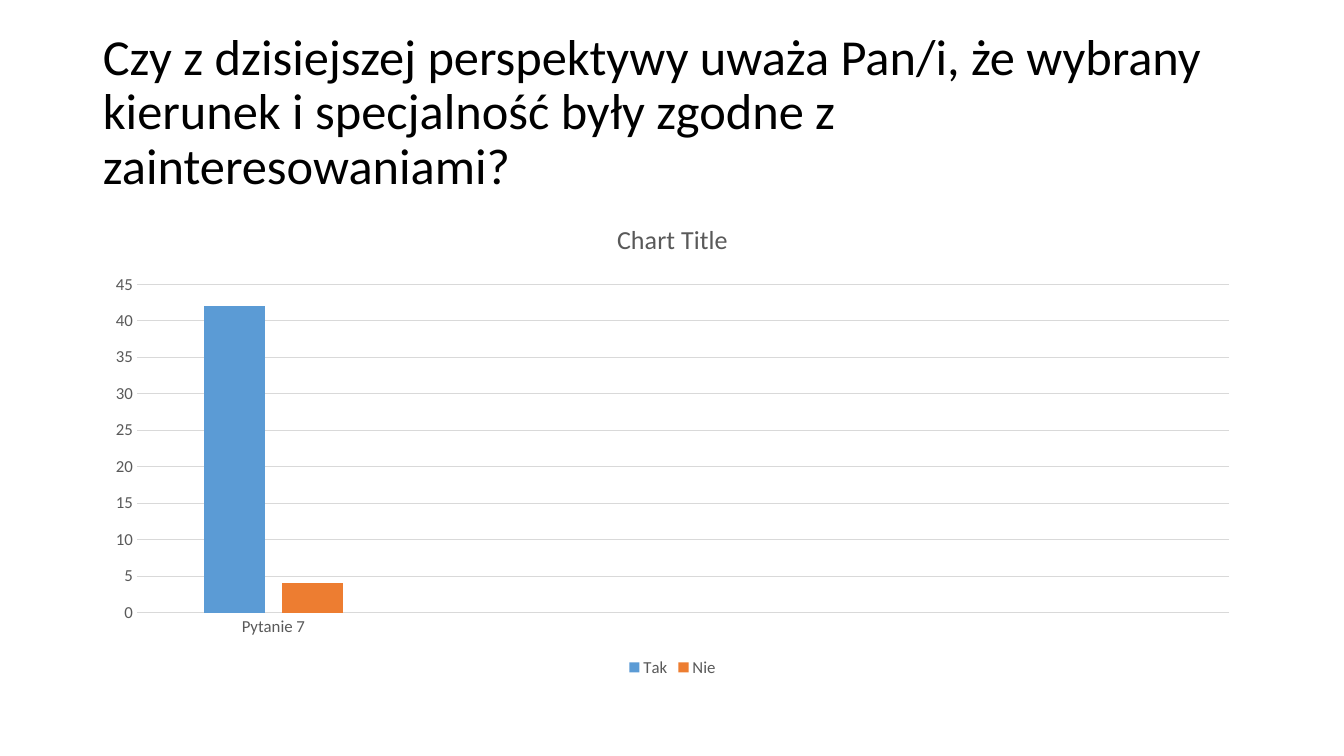
from pptx import Presentation, util as u
from pptx.chart.data import CategoryChartData
from pptx.dml.color import RGBColor
from pptx.enum import chart as ch, text as t
from lxml import etree

FONT = "Calibri"
HUES = {"ink": "000000", "label": "595959", "grid": "D9D9D9",
        "Tak": "5B9BD5", "Nie": "ED7D31"}
VOTES = {"Tak": 42, "Nie": 4}
SLOTS = ["Pytanie 7", "", "", ""]
WIDE, HIGH = 13.33, 7.5
LEFT, SPAN = 0.92, 11.5


def hue(name):
    return RGBColor.from_string(HUES[name])


def style(font, size=12, color="label"):
    font.name, font.size, font.bold = FONT, u.Pt(size), False
    font.color.rgb = hue(color)


def write(frame, words, size=12, color="label", align=None, lead=None):
    frame.text = words
    par = frame.paragraphs[0]
    par.alignment, par.line_spacing = align, lead
    style(par.runs[0].font, size, color)


def rule(line):
    line.color.rgb = hue("grid")
    line.width = u.Pt(0.75)


def head(slide, box, words):
    title = slide.shapes.title
    title.left, title.top, title.width, title.height = map(u.Inches, box)
    frame = title.text_frame
    frame.word_wrap = True
    frame.auto_size = t.MSO_AUTO_SIZE.NONE
    frame.vertical_anchor = t.MSO_ANCHOR.MIDDLE
    write(frame, words, size=36, color="ink", align=t.PP_ALIGN.LEFT, lead=0.9)


def bars(slide, box, name):
    data = CategoryChartData()
    data.categories = SLOTS
    for key, count in VOTES.items():
        data.add_series(key, [count] + [None] * (len(SLOTS) - 1))
    chart = slide.shapes.add_chart(
        ch.XL_CHART_TYPE.COLUMN_CLUSTERED, *map(u.Inches, box), data).chart
    style(chart.font, 10, "ink")
    chart.has_title = True
    write(chart.chart_title.text_frame, name, size=18.6)
    chart.chart_title.include_in_layout = False

    plot = chart.plots[0]
    plot.gap_width, plot.overlap = 219, -27
    plot.vary_by_categories = False
    for row in plot.series:
        row.format.fill.solid()
        row.format.fill.fore_color.rgb = hue(row.name)
        row.invert_if_negative = False

    for axis in (chart.category_axis, chart.value_axis):
        axis.major_tick_mark = axis.minor_tick_mark = ch.XL_TICK_MARK.NONE
        style(axis.tick_labels.font)
    rule(chart.category_axis.format.line)
    scale = chart.value_axis
    scale.minimum_scale, scale.maximum_scale, scale.major_unit = 0, 45, 5
    scale.format.line.fill.background()
    scale.has_major_gridlines = True
    rule(scale.major_gridlines.format.line)

    chart.has_legend = True
    chart.legend.position = ch.XL_LEGEND_POSITION.BOTTOM
    chart.legend.include_in_layout = False
    style(chart.legend.font)


def main():
    deck = Presentation()
    deck.slide_width, deck.slide_height = u.Inches(WIDE), u.Inches(HIGH)
    slide = deck.slides.add_slide(deck.slide_layouts[5])
    head(slide, (LEFT, 0.4, SPAN, 1.45),
         "Czy z dzisiejszej perspektywy uważa Pan/i, że wybrany kierunek "
         "i specjalność były zgodne z zainteresowaniami?")
    bars(slide, (LEFT, 2, SPAN, 4.76), "Chart Title")
    deck.save("out.pptx")


if __name__ == "__main__":
    main()
